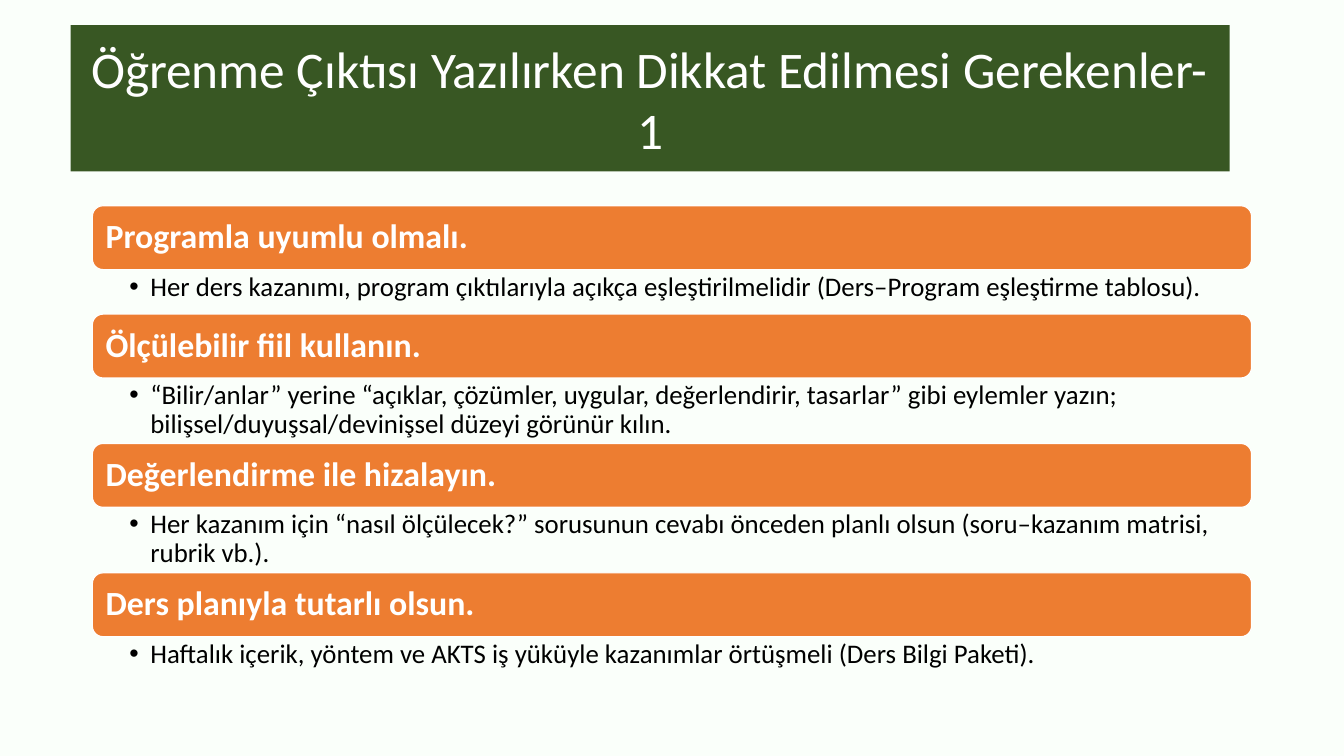
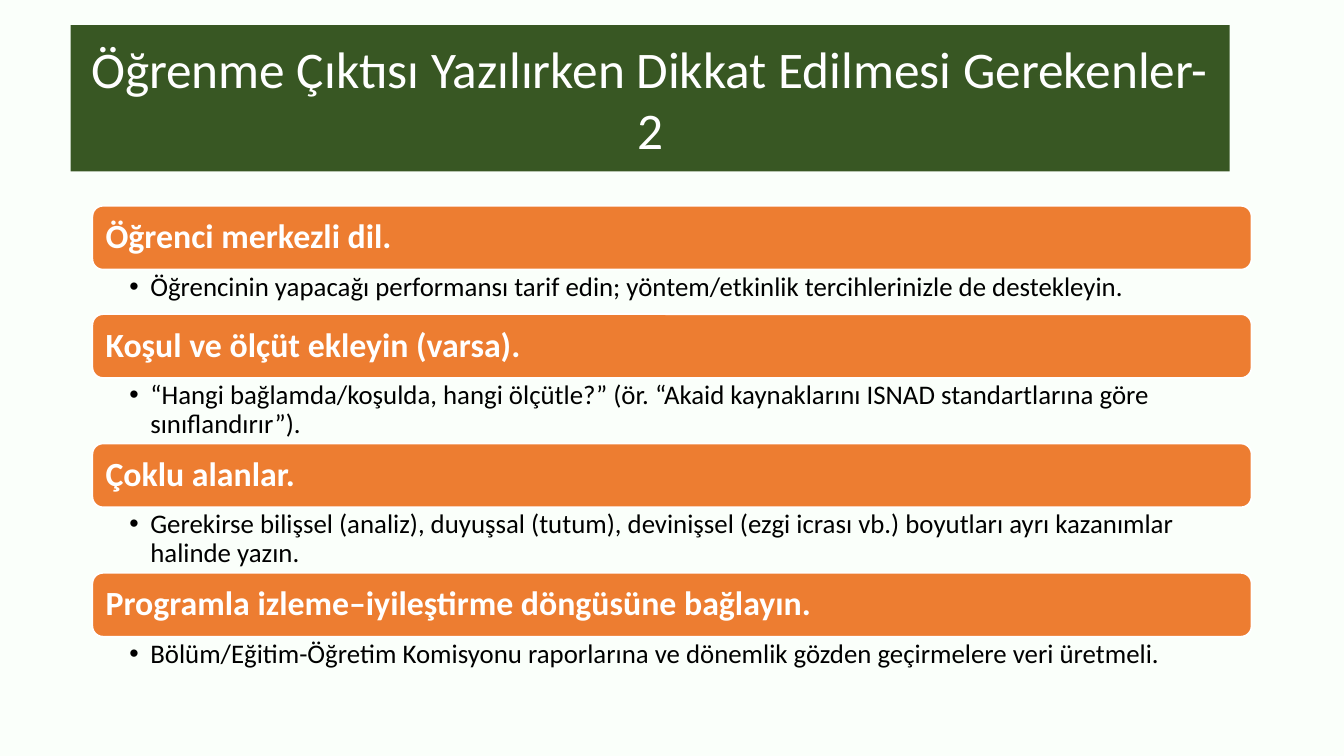
from dataclasses import dataclass

from lxml import etree
from pptx import Presentation, util as u
from pptx.dml.color import RGBColor
from pptx.enum import shapes, text
from pptx.oxml import ns


@dataclass(frozen=True)
class Theme:
    font: str = "Calibri"
    background: str = "FAFFFA"
    title_band: str = "385723"
    bar: str = "ED7D31"
    light: str = "FFFFFF"
    dark: str = "000000"
    title_size: int = 44
    bar_size: int = 29
    note_size: int = 23


THEME = Theme()
TITLE_BOX = (0.84, 0.3, 13.8, 1.74)
LIST_LEFT, LIST_TOP, LIST_WIDTH = 1.1, 2.45, 13.8
BAR_HEIGHT = 0.76
NOTE_HEIGHTS = {1: 0.53, 2: 0.78}
BULLET_INDENT = 0.25

TITLE = "Öğrenme Çıktısı Yazılırken Dikkat Edilmesi Gerekenler- "
SLIDES = [
    (TITLE + "1", 1, [
        ("Programla uyumlu olmalı.",
         "Her ders kazanımı, program çıktılarıyla açıkça eşleştirilmelidir "
         "(Ders–Program eşleştirme tablosu).", 1),
        ("Ölçülebilir fiil kullanın.",
         "“Bilir/anlar” yerine “açıklar, çözümler, uygular, değerlendirir, tasarlar” "
         "gibi eylemler yazın; bilişsel/duyuşsal/devinişsel düzeyi görünür kılın.", 2),
        ("Değerlendirme ile hizalayın.",
         "Her kazanım için “nasıl ölçülecek?” sorusunun cevabı önceden planlı olsun "
         "(soru–kazanım matrisi, rubrik vb.).", 2),
        ("Ders planıyla tutarlı olsun.",
         "Haftalık içerik, yöntem ve AKTS iş yüküyle kazanımlar örtüşmeli "
         "(Ders Bilgi Paketi).", 1),
    ]),
    (TITLE + "2", 1.5, [
        ("Öğrenci merkezli dil.",
         "Öğrencinin yapacağı performansı tarif edin; yöntem/etkinlik tercihlerinizle "
         "de destekleyin.", 1),
        ("Koşul ve ölçüt ekleyin (varsa).",
         "“Hangi bağlamda/koşulda, hangi ölçütle?” (ör. “Akaid kaynaklarını ISNAD "
         "standartlarına göre sınıflandırır”).", 2),
        ("Çoklu alanlar.",
         "Gerekirse bilişsel (analiz), duyuşsal (tutum), devinişsel (ezgi icrası vb.) "
         "boyutları ayrı kazanımlar halinde yazın.", 2),
        ("Programla izleme–iyileştirme döngüsüne bağlayın.",
         "Bölüm/Eğitim-Öğretim Komisyonu raporlarına ve dönemlik gözden geçirmelere "
         "veri üretmeli.", 1),
    ]),
]


def set_attributes(target, values):
    for name, value in values.items():
        setattr(target, name, value)


def inches(*lengths):
    return [u.Inches(length) for length in lengths]


def paint(fill, color):
    fill.solid()
    fill.fore_color.rgb = RGBColor.from_string(color)


def write(shape, content, size, color, frame, layout, bold=False):
    set_attributes(shape.text_frame, {
        "word_wrap": True, "auto_size": text.MSO_AUTO_SIZE.NONE, **frame})
    paragraph = shape.text_frame.paragraphs[0]
    set_attributes(paragraph, layout)
    run = paragraph.add_run()
    run.text = content
    set_attributes(run.font, {"name": THEME.font, "size": u.Pt(size), "bold": bold})
    run.font.color.rgb = RGBColor.from_string(color)
    return paragraph


def add_bullet(paragraph):
    properties = paragraph._p.get_or_add_pPr()
    properties.set("marL", str(u.Inches(BULLET_INDENT)))
    properties.set("indent", str(u.Inches(-BULLET_INDENT)))
    font = etree.SubElement(properties, ns.qn("a:buFont"))
    font.set("typeface", "Arial")
    etree.SubElement(properties, ns.qn("a:buChar")).set("char", "•")


def add_title(slide, content):
    title = slide.shapes.title
    set_attributes(title, dict(zip(("left", "top", "width", "height"), inches(*TITLE_BOX))))
    paint(title.fill, THEME.title_band)
    write(title, content, THEME.title_size, THEME.light,
          {"vertical_anchor": text.MSO_ANCHOR.MIDDLE},
          {"alignment": text.PP_ALIGN.CENTER, "space_after": u.Pt(6)})


def add_bar(slide, top, content, outline):
    bar = slide.shapes.add_shape(
        shapes.MSO_SHAPE.ROUNDED_RECTANGLE,
        *inches(LIST_LEFT, top, LIST_WIDTH, BAR_HEIGHT))
    bar.shadow.inherit = False
    paint(bar.fill, THEME.bar)
    paint(bar.line.fill, THEME.light)
    bar.line.width = u.Pt(outline)
    write(bar, content, THEME.bar_size, THEME.light,
          {"vertical_anchor": text.MSO_ANCHOR.MIDDLE,
           "margin_left": u.Inches(0.12), "margin_right": u.Inches(0.12)},
          {"alignment": text.PP_ALIGN.LEFT, "line_spacing": 0.9}, bold=True)


def add_note(slide, top, height, content):
    note = slide.shapes.add_textbox(*inches(LIST_LEFT, top, LIST_WIDTH, height))
    margins = dict(zip(("margin_left", "margin_top", "margin_right", "margin_bottom"),
                       inches(0.44, 0.04, 0.23, 0.04)))
    paragraph = write(note, content, THEME.note_size, THEME.dark, margins,
                      {"alignment": text.PP_ALIGN.LEFT, "level": 1, "line_spacing": 0.9})
    add_bullet(paragraph)


def add_advice_list(slide, advice, outline):
    top = LIST_TOP
    for heading, note, lines in advice:
        add_bar(slide, top, heading, outline)
        top += BAR_HEIGHT
        add_note(slide, top, NOTE_HEIGHTS[lines], note)
        top += NOTE_HEIGHTS[lines]


def main():
    presentation = Presentation()
    set_attributes(presentation, {"slide_width": u.Inches(16), "slide_height": u.Inches(9)})
    paint(presentation.slide_master.background.fill, THEME.background)
    title_only = presentation.slide_layouts.get_by_name("Title Only")
    for title, outline, advice in SLIDES:
        slide = presentation.slides.add_slide(title_only)
        add_title(slide, title)
        add_advice_list(slide, advice, outline)
    presentation.save("out.pptx")


if __name__ == "__main__":
    main()
